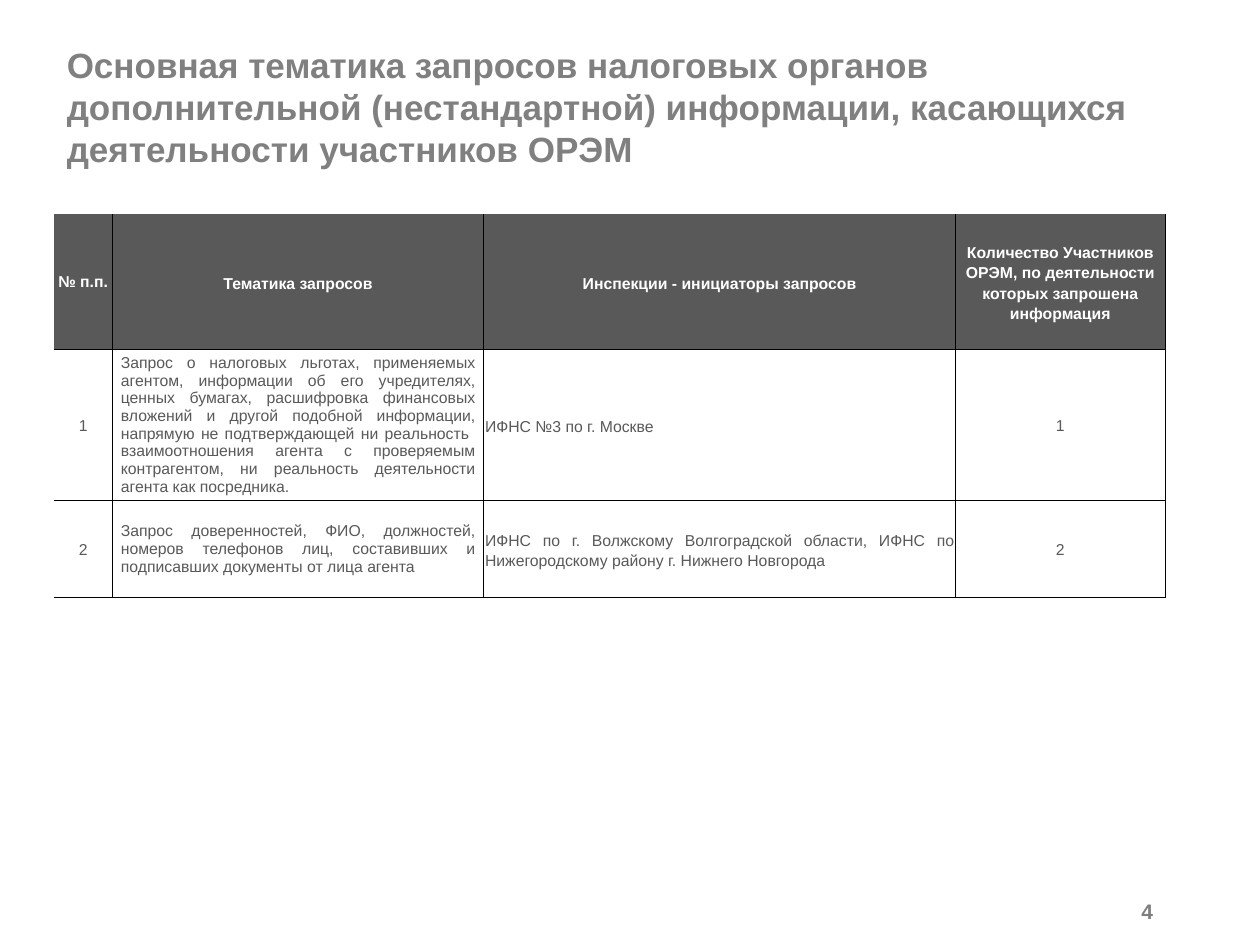
"""Build a slide with a table of tax authority request topics."""
import pptx
import pptx.util
import pptx.dml.color
import pptx.enum.text
import pptx.oxml

Inches, Pt = pptx.util.Inches, pptx.util.Pt
ALIGN = pptx.enum.text.PP_ALIGN
MIDDLE = pptx.enum.text.MSO_ANCHOR.MIDDLE
NS = "http://schemas.openxmlformats.org/drawingml/2006/main"


def color(value):
    return pptx.dml.color.RGBColor.from_string(value)


def style(paragraph, size, value, bold, align):
    paragraph.alignment = align
    for run in paragraph.runs:
        run.font.name = "Arial"
        run.font.size = Pt(size)
        run.font.bold = bold
        run.font.color.rgb = color(value)


deck = pptx.Presentation()
deck.slide_width, deck.slide_height = Inches(10), Inches(7.5)
slide = deck.slides.add_slide(deck.slide_layouts[5])

title = slide.shapes.title
title.left, title.top = Inches(0.43), Inches(0.3)
title.width, title.height = Inches(8.82), Inches(1.09)
title.text_frame.text = (
    "Основная тематика запросов налоговых органов дополнительной "
    "(нестандартной) информации, касающихся деятельности участников ОРЭМ"
)
title.text_frame.vertical_anchor = MIDDLE
title.text_frame.auto_size = pptx.enum.text.MSO_AUTO_SIZE.NONE
style(title.text_frame.paragraphs[0], 20, "808080", True, ALIGN.LEFT)

page_number = slide.shapes.add_textbox(Inches(8.15), Inches(7.06), Inches(1.1), Inches(0.34))
page_number.text_frame.word_wrap = True
page_number.text_frame.text = "4"
page_number.text_frame.vertical_anchor = MIDDLE
style(page_number.text_frame.paragraphs[0], 12, "7F7F7F", True, ALIGN.RIGHT)

requests = [
    ["№ п.п.", "Тематика запросов", "Инспекции - инициаторы запросов",
     "Количество Участников ОРЭМ, по деятельности которых запрошена информация"],
    ["1",
     "Запрос о налоговых льготах, применяемых агентом, информации об его "
     "учредителях, ценных бумагах, расшифровка финансовых вложений и другой "
     "подобной информации, напрямую не подтверждающей ни реальность  "
     "взаимоотношения агента с проверяемым контрагентом, ни реальность "
     "деятельности агента как посредника.",
     "ИФНС №3 по г. Москве", "1"],
    ["2",
     "Запрос доверенностей, ФИО, должностей, номеров телефонов лиц, составивших "
     "и подписавших документы от лица агента",
     "ИФНС по г. Волжскому Волгоградской области, ИФНС по Нижегородскому району "
     "г. Нижнего Новгорода", "2"],
]
column_widths = [0.46, 2.95, 3.74, 1.67]
row_heights = [1.07, 1.12, 0.77]
body_aligns = [ALIGN.CENTER, ALIGN.JUSTIFY, ALIGN.JUSTIFY, ALIGN.CENTER]

table = slide.shapes.add_table(
    len(row_heights), len(column_widths), Inches(0.43), Inches(1.7),
    Inches(sum(column_widths)), Inches(sum(row_heights)),
).table
for column, width in zip(table.columns, column_widths):
    column.width = Inches(width)
for row, height in zip(table.rows, row_heights):
    row.height = Inches(height)

for r, request in enumerate(requests):
    for c, text in enumerate(request):
        cell = table.cell(r, c)
        header = r == 0
        tight = header or c == 2
        cell.text_frame.text = text
        cell.vertical_anchor = MIDDLE
        cell.margin_left = cell.margin_right = Inches(0.01 if tight else 0.07)
        cell.margin_top = Inches(0.01 if tight else 0)
        cell.margin_bottom = 0
        paragraph = cell.text_frame.paragraphs[0]
        style(paragraph, 9, "FFFFFF" if header else "595959", header,
              ALIGN.CENTER if header else body_aligns[c])
        if not (header and c == 0) and (header or c != 1):
            paragraph.line_spacing = 1.15

        properties = cell._tc.get_or_add_tcPr()
        for side, visible in [("L", c > 0), ("R", True), ("T", r > 0), ("B", True)]:
            paint = '<a:solidFill><a:srgbClr val="000000"/></a:solidFill>' if visible else "<a:noFill/>"
            properties.append(pptx.oxml.parse_xml(
                f'<a:ln{side} xmlns:a="{NS}" w="{Pt(0.5)}">{paint}</a:ln{side}>'))
        cell.fill.solid()
        cell.fill.fore_color.rgb = color("595959" if header else "FFFFFF")

deck.save("out.pptx")
